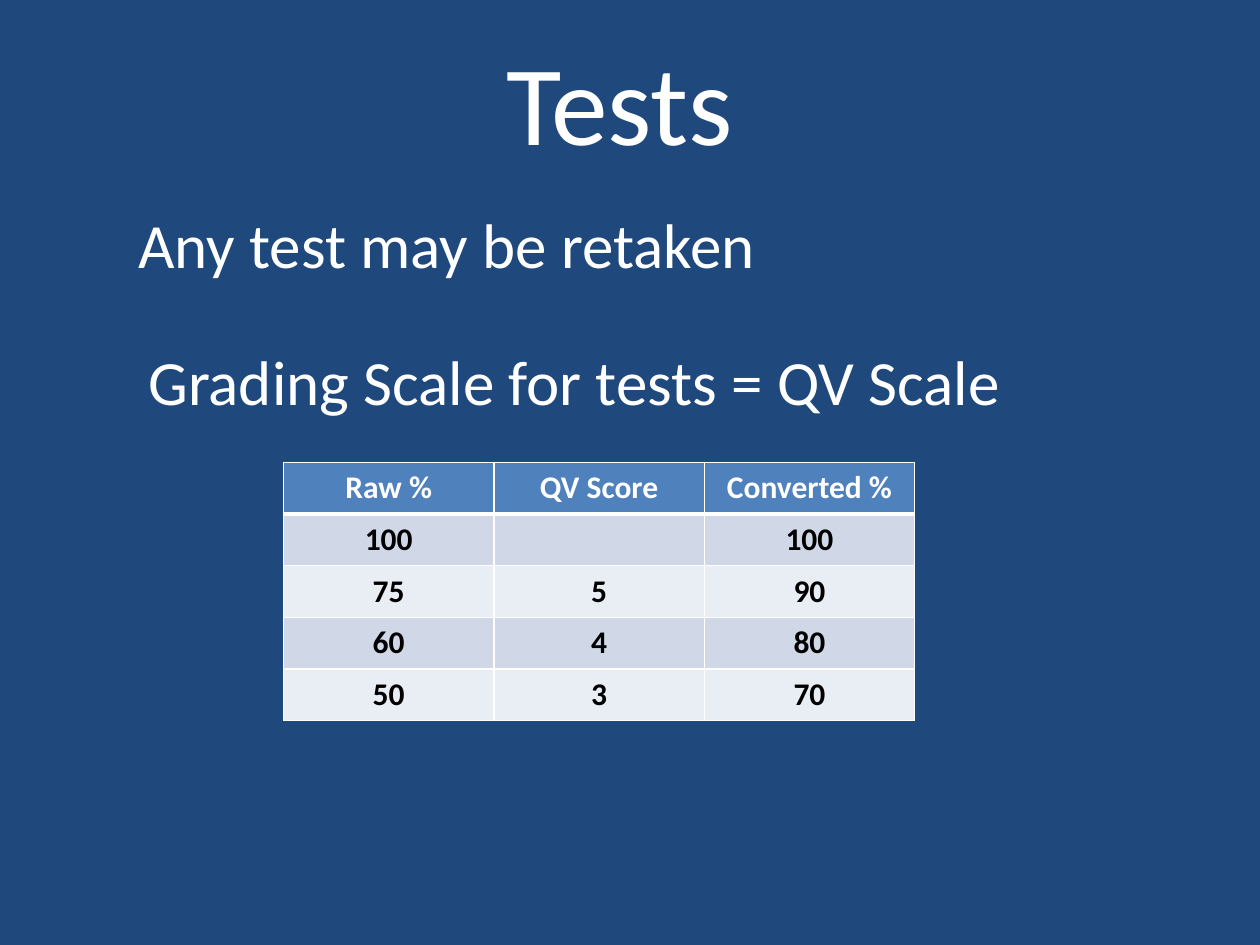
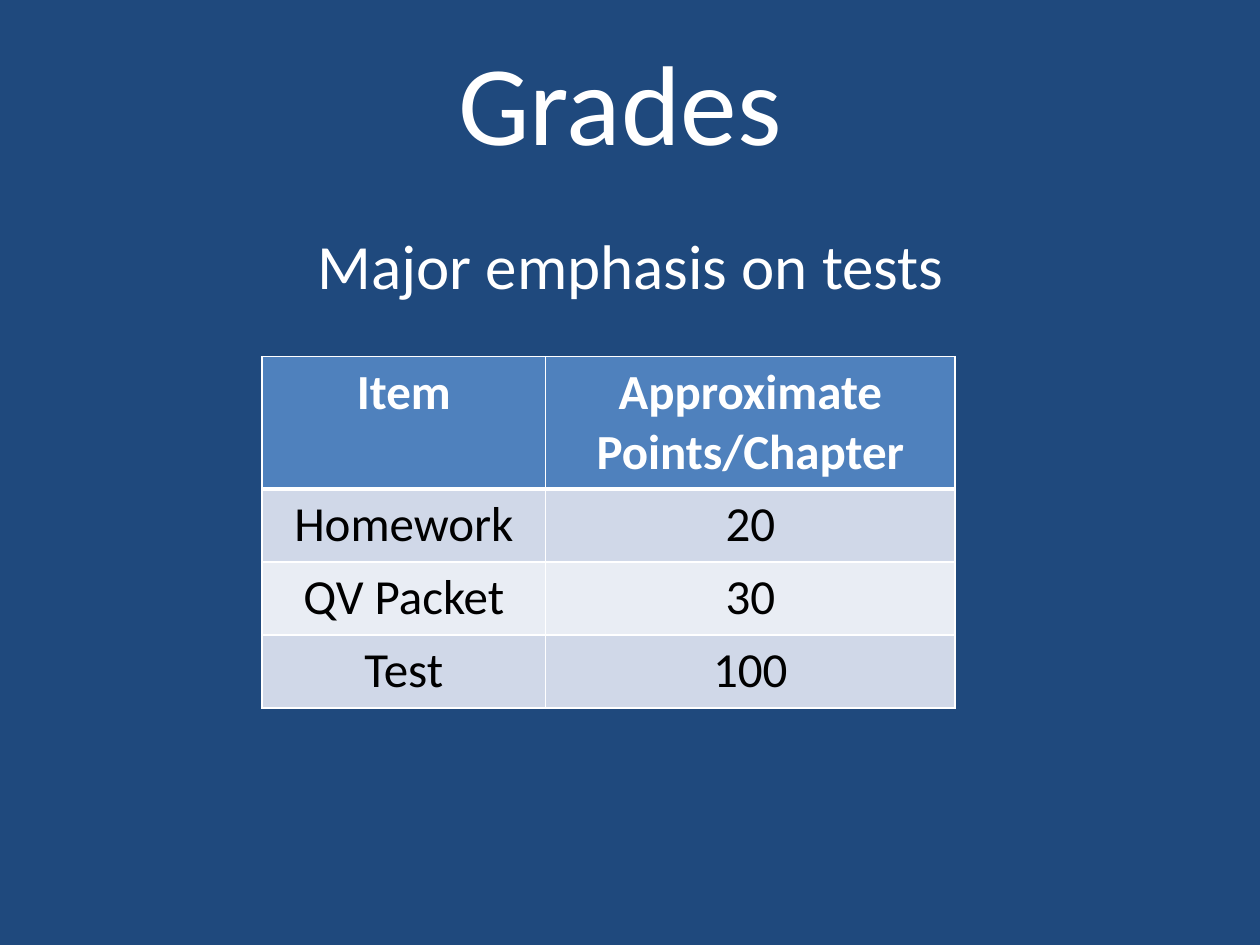
"""Build two slides on test scoring and grade weights."""
from lxml.etree import SubElement
from pptx import Presentation
from pptx.dml.color import RGBColor
from pptx.enum.text import MSO_ANCHOR, PP_ALIGN
from pptx.oxml.ns import qn
from pptx.util import Inches, Pt

NAVY, BLUE, WHITE, BLACK = "1F497D", "4F81BD", "FFFFFF", "000000"
BANDS = ["E9EDF4", "D0D8E8"]
TITLE = {"size": Pt(64.8), "name": "Calibri"}
BODY = {"size": Pt(36), "name": "Calibri"}

SLIDES = [
    {
        "title": "Tests",
        "lines": [
            ("Any test may be retaken", 1, 1.58, 6.88, 0.83),
            ("Grading Scale for tests = QV Scale", 1.08, 2.67, 7.67, 0.83),
        ],
        "spot": (2.25, 3.67),
        "cols": [1.67] * 3,
        "tall": [0.41] * 5,
        "size": 18,
        "bold": True,
        "rows": [
            ("Raw %", "QV Score", "Converted %"),
            ("100", "", "100"),
            ("75", "5", "90"),
            ("60", "4", "80"),
            ("50", "3", "70"),
        ],
    },
    {
        "title": "Grades",
        "lines": [("Major emphasis on tests", 2.42, 1.75, 5.42, 0.71)],
        "spot": (2.08, 2.83),
        "cols": [2.25, 3.25],
        "tall": [1.05] + [0.58] * 3,
        "size": 28,
        "bold": False,
        "rows": [
            ("Item", "Approximate Points/Chapter"),
            ("Homework", "20"),
            ("QV Packet", "30"),
            ("Test", "100"),
        ],
    },
]


def paint(fill, color):
    fill.solid()
    fill.fore_color.rgb = RGBColor.from_string(color)


def write(frame, text, style, color, align):
    para = frame.paragraphs[0]
    para.alignment = align
    run = para.add_run()
    run.text = text
    for key, value in style.items():
        setattr(run.font, key, value)
    paint(run.font.fill, color)


deck = Presentation()
deck.slide_width, deck.slide_height = Inches(10), Inches(7.5)

for data in SLIDES:
    slide = deck.slides.add_slide(deck.slide_layouts[6])
    paint(slide.background.fill, NAVY)

    texts = [(data["title"], 0.67, 0.17, 8.5, 1.25)] + data["lines"]
    for i, (text, *area) in enumerate(texts):
        frame = slide.shapes.add_textbox(*map(Inches, area)).text_frame
        frame.word_wrap = True
        if i == 0:
            frame.vertical_anchor = MSO_ANCHOR.MIDDLE
            write(frame, text, TITLE, WHITE, PP_ALIGN.CENTER)
        else:
            write(frame, text, BODY, WHITE, PP_ALIGN.LEFT)

    rows, cols, tall = data["rows"], data["cols"], data["tall"]
    area = (*data["spot"], sum(cols), sum(tall))
    grid = slide.shapes.add_table(len(rows), len(cols), *map(Inches, area)).table
    for col, wide in zip(grid.columns, cols):
        col.width = Inches(wide)
    for row, high in zip(grid.rows, tall):
        row.height = Inches(high)

    for r, row in enumerate(rows):
        for c, text in enumerate(row):
            cell = grid.cell(r, c)
            props = cell._tc.get_or_add_tcPr()
            for side in "LRTB":
                thick = (r == 0 and side == "B") or (r == 1 and side == "T")
                width = Pt(3 if thick else 1)
                line = SubElement(props, qn(f"a:ln{side}"), w=str(width))
                fill = SubElement(line, qn("a:solidFill"))
                SubElement(fill, qn("a:srgbClr"), val=WHITE)
            paint(cell.fill, BANDS[r % 2] if r else BLUE)
            if text:
                style = {**BODY, "size": Pt(data["size"]), "bold": r == 0 or data["bold"]}
                write(cell.text_frame, text, style, BLACK if r else WHITE, PP_ALIGN.CENTER)

deck.save("out.pptx")
